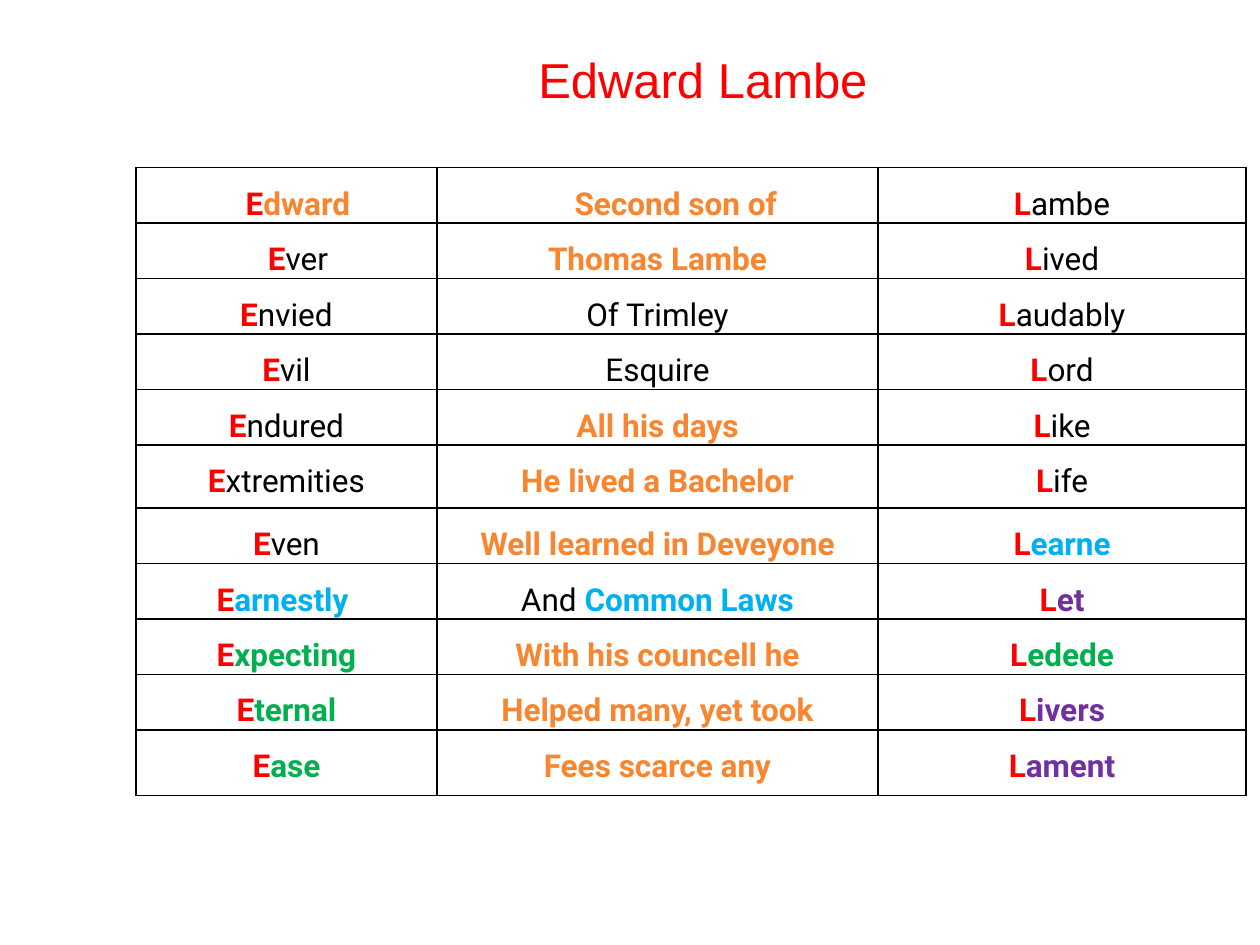
from pptx import Presentation
from pptx.dml.color import RGBColor
from pptx.enum.text import MSO_ANCHOR, PP_ALIGN
from pptx.oxml import parse_xml
from pptx.oxml.ns import nsdecls
from pptx.util import Cm, Pt

CENTER = PP_ALIGN.CENTER
MIDDLE = MSO_ANCHOR.MIDDLE

RED = RGBColor(0xFF, 0x00, 0x00)
BLACK = RGBColor(0x00, 0x00, 0x00)
ORANGE = RGBColor(0xF8, 0x86, 0x31)
BLUE = RGBColor(0x00, 0xB0, 0xF0)
GREEN = RGBColor(0x00, 0xB0, 0x50)
PURPLE = RGBColor(0x70, 0x30, 0xA0)

TITLE_FONT = {"name": "Arial", "size": Pt(28)}
VERSE_FONT = {"name": "Roboto", "size": Pt(18)}
CELL_FORMAT = {"margin_left": Cm(0.18), "margin_right": Cm(0.18),
               "margin_top": 0, "margin_bottom": 0}

COLUMN_WIDTHS = [6.07, 8.89, 7.42]
ROW_HEIGHTS = [0.99, 0.99, 0.99, 0.99, 1.09, 1.27, 0.99, 1.02, 1.09, 0.99, 1.32]

# Each line: E word and colour, middle runs, L word and colour
ACROSTIC = [
    ("Edward", ORANGE, [("Second son of", ORANGE)], "Lambe", BLACK),
    ("Ever", BLACK, [("Thomas Lambe", ORANGE)], "Lived", BLACK),
    ("Envied", BLACK, [("Of Trimley", BLACK)], "Laudably", BLACK),
    ("Evil", BLACK, [("Esquire", BLACK)], "Lord", BLACK),
    ("Endured", BLACK, [("All his days", ORANGE)], "Like", BLACK),
    ("Extremities", BLACK, [("He lived a Bachelor", ORANGE)], "Life", BLACK),
    ("Even", BLACK, [("Well learned in Deveyone", ORANGE)], "Learne", BLUE),
    ("Earnestly ", BLUE, [("And ", BLACK), ("Common Laws", BLUE)], "Let", PURPLE),
    ("Expecting", GREEN, [("With his councell he", ORANGE)], "Ledede", GREEN),
    ("Eternal", GREEN, [("Helped many, yet took", ORANGE)], "Livers", PURPLE),
    ("Ease", GREEN, [("Fees scarce any", ORANGE)], "Lament", PURPLE),
]
# Left indents in cm by (row, column)
INDENTS = {(0, 0): 0.46, (0, 1): 0.74, (1, 0): 0.46}


def apply(target, values):
    for attribute, value in values.items():
        setattr(target, attribute, value)


def initial_runs(word, color):
    """Red initial followed by the rest of the word."""
    return [(word[0], RED), (word[1:], color)]


class SlideBuilder:
    def __init__(self, presentation):
        self.slide = presentation.slides.add_slide(presentation.slide_layouts[5])

    def add_words(self, paragraph, runs, font, **extra):
        paragraph.alignment = CENTER
        for text, color in runs:
            run = paragraph.add_run()
            run.text = text
            apply(run.font, {**font, "bold": color != BLACK, **extra})
            run.font.color.rgb = color

    def title(self, text, left, top, width, height):
        heading = self.slide.shapes.title
        apply(heading, {"left": Cm(left), "top": Cm(top),
                        "width": Cm(width), "height": Cm(height)})
        heading.text_frame.vertical_anchor = MIDDLE
        self.add_words(heading.text_frame.paragraphs[0], [(text, RED)],
                       TITLE_FONT, bold=False)

    def border(self, cell):
        properties = cell._tc.get_or_add_tcPr()
        for position, side in enumerate(("lnL", "lnR", "lnT", "lnB")):
            properties.insert(position, parse_xml(
                f'<a:{side} {nsdecls("a")} w="12700"><a:solidFill>'
                f'<a:srgbClr val="{BLACK}"/></a:solidFill></a:{side}>'))

    def cell(self, cell, runs, indent):
        apply(cell, CELL_FORMAT)
        cell.fill.background()
        self.border(cell)
        paragraph = cell.text_frame.paragraphs[0]
        paragraph.line_spacing = 1.5
        if indent:
            paragraph._p.get_or_add_pPr().set("marL", str(Cm(indent)))
        self.add_words(paragraph, runs, VERSE_FONT)

    def table(self, lines, left, top):
        verses = self.slide.shapes.add_table(
            len(lines), len(COLUMN_WIDTHS), Cm(left), Cm(top),
            Cm(sum(COLUMN_WIDTHS)), Cm(sum(ROW_HEIGHTS))).table
        apply(verses, {"first_row": False, "horz_banding": False})
        for column, width in zip(verses.columns, COLUMN_WIDTHS):
            column.width = Cm(width)
        for row, height in zip(verses.rows, ROW_HEIGHTS):
            row.height = Cm(height)
        for r, (e_word, e_color, middle, l_word, l_color) in enumerate(lines):
            columns = (initial_runs(e_word, e_color), middle,
                       initial_runs(l_word, l_color))
            for c, runs in enumerate(columns):
                self.cell(verses.cell(r, c), runs, INDENTS.get((r, c)))


def main():
    presentation = Presentation()
    apply(presentation, {"slide_width": Cm(25.4), "slide_height": Cm(19.05)})
    builder = SlideBuilder(presentation)
    # Heading
    builder.title("Edward Lambe ", 4.88, 0.43, 18.85, 2.34)
    # Acrostic verses
    builder.table(ACROSTIC, 2.74, 3.38)
    presentation.save("out.pptx")


if __name__ == "__main__":
    main()
